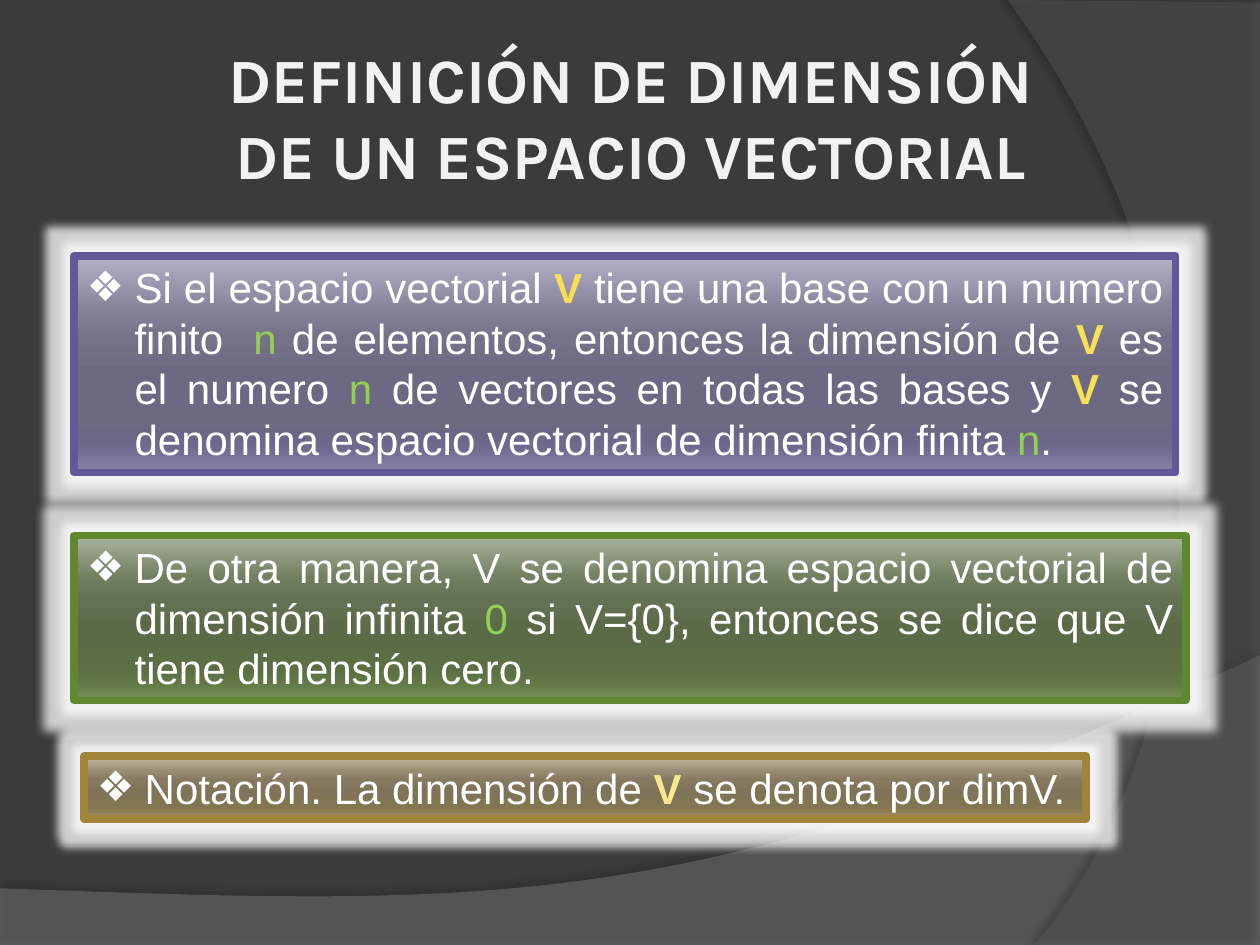
from dataclasses import dataclass

from lxml.etree import SubElement
from pptx import Presentation
from pptx.dml.color import RGBColor
from pptx.enum.shapes import MSO_SHAPE
from pptx.enum.text import MSO_ANCHOR, MSO_AUTO_SIZE, PP_ALIGN
from pptx.oxml.ns import qn
from pptx.util import Inches, Pt

BACKGROUND = RGBColor(0x3B, 0x3B, 0x3B)
WAVE_GRAY = RGBColor(0x7F, 0x7F, 0x7F)
ARC_GRAY = RGBColor(0x5E, 0x5E, 0x5E)
TITLE_WHITE = RGBColor(0xF2, 0xF2, 0xF2)
WHITE = RGBColor(0xFF, 0xFF, 0xFF)
BLACK = RGBColor(0, 0, 0)
YELLOW = RGBColor(0xF7, 0xDF, 0x56)
PALE_YELLOW = RGBColor(0xF9, 0xE9, 0x8E)
GREEN = RGBColor(0x92, 0xD0, 0x50)
PURPLE_BORDER = RGBColor(0x62, 0x58, 0x99)
GREEN_BORDER = RGBColor(0x5F, 0x88, 0x2F)
GOLD_BORDER = RGBColor(0xA1, 0x84, 0x3A)
STOPS = (0, 25, 38, 55, 80, 88, 100)
Point = tuple[float, float]


@dataclass
class Wave:
    start: Point
    curve: tuple[Point, Point, Point]
    corners: list[Point]
    color: RGBColor
    opacity: int
    shadow_opacity: int
    shadow_blur: float
    shadow_distance: float
    shadow_angle: int


@dataclass
class Statement:
    box: tuple[float, float, float, float]
    gradient: str
    border: RGBColor
    alignment: PP_ALIGN
    phrases: list[tuple[str, RGBColor]]


WAVES = [
    Wave((10, 5.2), ((5.59, 7.29), (3.91, 7.19), (0, 7.05)), [(0, 7.5), (10, 7.5)],
         WAVE_GRAY, 45, 35, 4, 3.5, 270),
    Wave((8.21, 7.5), ((9.35, 6.19), (10.18, 3), (8, 0)), [(10, 0.02), (10, 7.5)],
         ARC_GRAY, 40, 45, 4, 4, 180),
]
STATEMENTS = [
    Statement(
        (0.59, 2.03, 8.74, 1.72), "B3B0C6 86829A 747188 6D6983 6A6684 6F698D 8982AC",
        PURPLE_BORDER, PP_ALIGN.JUSTIFY,
        [("Si el espacio vectorial ", WHITE), ("V", YELLOW),
         (" tiene una base con un numero finito  ", WHITE), ("n", GREEN),
         (" de elementos, entonces la dimensión de ", WHITE), ("V ", YELLOW),
         ("es el numero ", WHITE), ("n ", GREEN),
         ("de vectores en todas las bases y ", WHITE), ("V", YELLOW),
         (" se denomina espacio vectorial de dimensión finita ", WHITE),
         ("n", GREEN), (".", WHITE)]),
    Statement(
        (0.59, 4.25, 8.82, 1.31), "A9B59D 728062 647254 5B6B48 5B6E44 607645 769058",
        GREEN_BORDER, PP_ALIGN.JUSTIFY,
        [("De otra manera, V se denomina espacio vectorial de dimensión infinita ", WHITE),
         ("0", GREEN),
         (" si V={0}, entonces se dice que V tiene dimensión cero.", WHITE)]),
    Statement(
        (0.67, 6, 7.95, 0.5), "C4BAA3 958B71 857A60 7F7457 827552 8C7C54 AA9868",
        GOLD_BORDER, PP_ALIGN.LEFT,
        [("Notación. La dimensión de ", WHITE), ("V ", PALE_YELLOW),
         ("se denota por dimV.", WHITE)]),
]


def set_values(target, values: dict) -> None:
    for attribute, value in values.items():
        setattr(target, attribute, value)


def add_color(parent, color, opacity: int = 100) -> None:
    tint = SubElement(parent, qn("a:srgbClr"), val=str(color))
    if opacity < 100:
        SubElement(tint, qn("a:alpha"), val=str(opacity * 1000))


def add_effect(shape, tag: str, color: RGBColor, opacity: int, **values: int) -> None:
    shape.shadow.inherit = False
    effects = shape._element.spPr.find(qn("a:effectLst"))
    effect = SubElement(effects, qn(tag), {name: str(value) for name, value in values.items()})
    add_color(effect, color, opacity)


def add_phrase(paragraph, text: str, font: dict, color: RGBColor) -> None:
    run = paragraph.add_run()
    run.text = text
    set_values(run.font, font)
    run.font.color.rgb = color


def bezier(start: Point, curve: tuple[Point, Point, Point], steps: int = 48) -> list[Point]:
    def at(t: float) -> Point:
        weights = ((1 - t) ** 3, 3 * t * (1 - t) ** 2, 3 * t * t * (1 - t), t ** 3)
        controls = (start, *curve)
        return (sum(w * p[0] for w, p in zip(weights, controls)),
                sum(w * p[1] for w, p in zip(weights, controls)))
    return [at(step / steps) for step in range(1, steps + 1)]


def draw_wave(slide, wave: Wave) -> None:
    outline = slide.shapes.build_freeform(*map(Inches, wave.start), scale=1.0)
    edge = bezier(wave.start, wave.curve) + wave.corners
    outline.add_line_segments([(Inches(x), Inches(y)) for x, y in edge], close=True)
    shape = outline.convert_to_shape()
    shape.fill.solid()
    shape.fill.fore_color.rgb = wave.color
    tint = shape._element.spPr.find(f"{qn('a:solidFill')}/{qn('a:srgbClr')}")
    SubElement(tint, qn("a:alpha"), val=str(wave.opacity * 1000))
    shape.line.fill.background()
    add_effect(shape, "a:outerShdw", BLACK, wave.shadow_opacity,
               blurRad=Pt(wave.shadow_blur), dist=Pt(wave.shadow_distance),
               dir=wave.shadow_angle * 60000)


def draw_title(slide, lines: list[str]) -> None:
    frame = slide.shapes.add_textbox(*map(Inches, (0.92, 0.3, 8.17, 1.25))).text_frame
    margins = dict.fromkeys(
        ("margin_left", "margin_right", "margin_top", "margin_bottom"), Inches(0.05))
    set_values(frame, {"word_wrap": True, "vertical_anchor": MSO_ANCHOR.MIDDLE, **margins})
    heading = frame.paragraphs[0]
    heading.alignment = PP_ALIGN.CENTER
    for index, line in enumerate(lines):
        if index:
            heading.add_line_break()
        add_phrase(heading, line, {"name": "Karla", "size": Pt(36), "bold": True}, TITLE_WHITE)


def draw_statement(slide, statement: Statement) -> None:
    panel = slide.shapes.add_shape(MSO_SHAPE.RECTANGLE, *map(Inches, statement.box))
    panel.fill.gradient()
    panel.fill.gradient_angle = 270
    stops = panel._element.spPr.find(f"{qn('a:gradFill')}/{qn('a:gsLst')}")
    stops.clear()
    for position, color in zip(STOPS, statement.gradient.split()):
        add_color(SubElement(stops, qn("a:gs"), pos=str(position * 1000)), color)
    panel.line.color.rgb = statement.border
    panel.line.width = Pt(4.5)
    add_effect(panel, "a:glow", WHITE, 75, rad=Pt(10))

    frame = panel.text_frame
    set_values(frame, {"word_wrap": True, "vertical_anchor": MSO_ANCHOR.TOP,
                       "auto_size": MSO_AUTO_SIZE.SHAPE_TO_FIT_TEXT})
    paragraph = frame.paragraphs[0]
    paragraph.alignment = statement.alignment
    properties = paragraph._p.get_or_add_pPr()
    properties.set("marL", str(Inches(0.38)))
    properties.set("indent", str(Inches(-0.38)))
    SubElement(properties, qn("a:buFont"), typeface="Arial")
    SubElement(properties, qn("a:buChar"), char="❖")
    for text, color in statement.phrases:
        font = {"name": "Arial", "size": Pt(24), "bold": color in (YELLOW, PALE_YELLOW)}
        add_phrase(paragraph, text, font, color)


def main() -> None:
    presentation = Presentation()
    set_values(presentation, {"slide_width": Inches(10), "slide_height": Inches(7.5)})
    slide = presentation.slides.add_slide(presentation.slide_layouts[6])
    slide.background.fill.solid()
    slide.background.fill.fore_color.rgb = BACKGROUND
    for wave in WAVES:
        draw_wave(slide, wave)
    draw_title(slide, ["DEFINICIÓN DE DIMENSIÓN", "DE UN ESPACIO VECTORIAL"])
    for statement in STATEMENTS:
        draw_statement(slide, statement)
    presentation.save("out.pptx")


if __name__ == "__main__":
    main()
